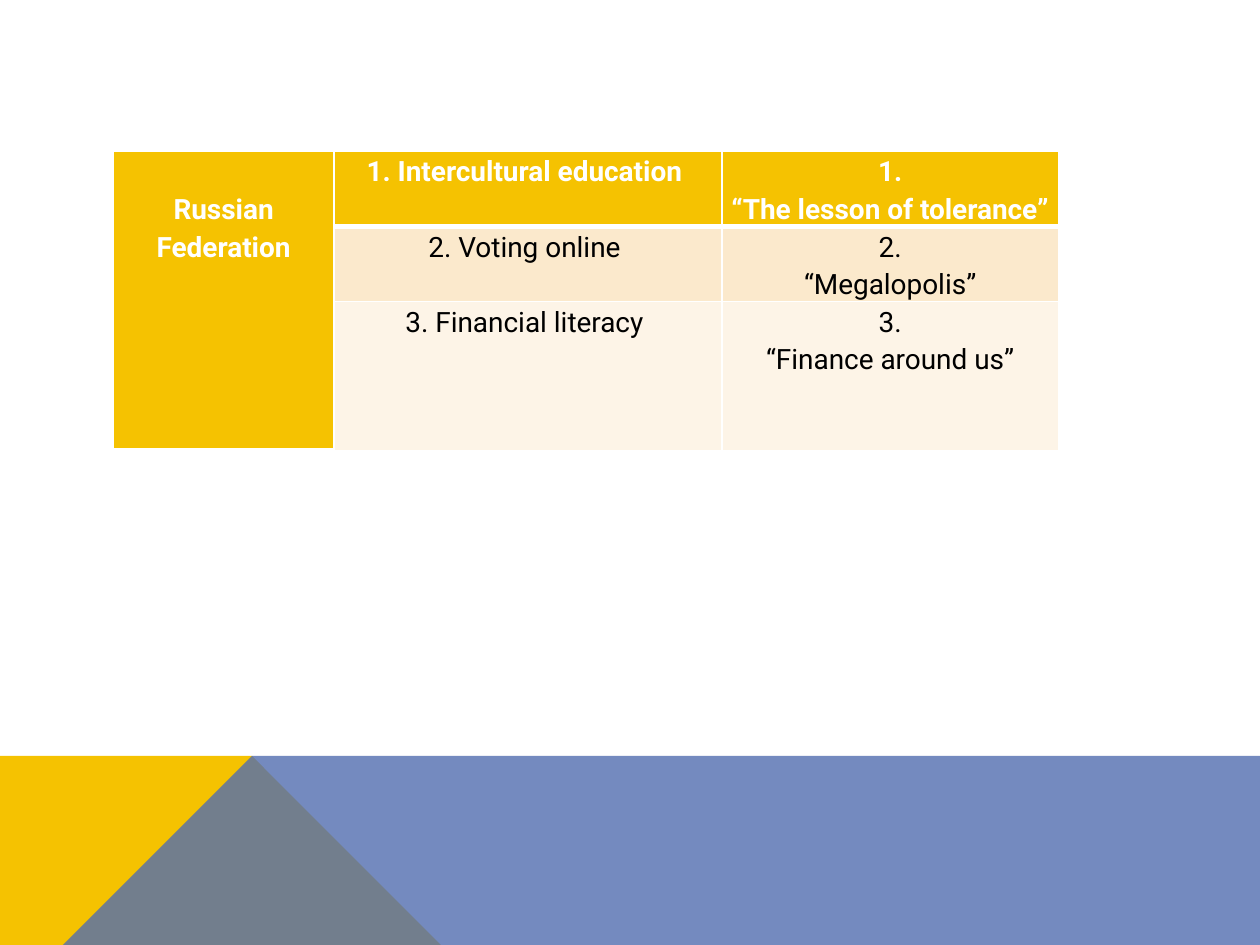
"""Build a slide with a table of Russian Federation lessons above a two-colour footer."""
from lxml import etree
from pptx import Presentation
from pptx.dml.color import RGBColor
from pptx.enum.text import PP_ALIGN
from pptx.oxml.ns import qn
from pptx.util import Inches, Pt

CENTER = PP_ALIGN.CENTER
THEME = {
    "font": "Roboto", "size": Pt(16),
    "gold": "F5C201", "blue": "526DB0", "white": "FFFFFF", "black": "000000",
    "rows": ["F5C201", "FBE9CC", "FDF4E7"],
}


def rule(cell, side, spot, width):
    line = etree.Element(qn("a:" + side), w=str(Pt(width)))
    fill = etree.SubElement(line, qn("a:solidFill"))
    etree.SubElement(fill, qn("a:srgbClr"), val=THEME["white"])
    cell.fill.solid()
    cell._tc.get_or_add_tcPr().insert(spot, line)


def write(cell, lines, fill, head, top=0):
    for spot, side in enumerate(["lnL", "lnR", "lnT", "lnB"]):
        rule(cell, side, spot, 3 if head and side == "lnB" else 1)
    cell.fill.fore_color.rgb = RGBColor.from_string(fill)
    edges = {"margin_left": 0.03, "margin_right": 0.03, "margin_top": top, "margin_bottom": 0}
    for name, value in edges.items():
        setattr(cell, name, Inches(value))
    cell.text = "\n".join(lines)
    for para in cell.text_frame.paragraphs:
        para.alignment, para.line_spacing = CENTER, 1.15
        font = para.runs[0].font
        look = {"name": THEME["font"], "size": THEME["size"], "bold": head}
        for name, value in look.items():
            setattr(font, name, value)
        font.color.rgb = RGBColor.from_string(THEME["white" if head else "black"])


deck = Presentation()
deck.slide_width, deck.slide_height = Inches(10), Inches(7.5)
slide = deck.slides.add_slide(deck.slide_layouts[6])

footer = [
    ("gold", 100, [(0, 7.5), (0, 5.52), (2.23, 5.52), (3.91, 7.5)]),
    ("blue", 80, [(0, 7.5), (2.23, 5.52), (10, 5.53), (10, 7.5)]),
]
for color, alpha, points in footer:
    path = slide.shapes.build_freeform(*points[0], scale=Inches(1))
    path.add_line_segments(points[1:], close=True)
    shape = path.convert_to_shape()
    shape.shadow.inherit = False
    shape.line.fill.background()
    shape.fill.solid()
    shape.fill.fore_color.rgb = RGBColor.from_string(THEME[color])
    if alpha < 100:
        tint = next(shape.element.spPr.iter(qn("a:srgbClr")))
        etree.SubElement(tint, qn("a:alpha"), val=str(alpha * 1000))

widths, heights = [1.75, 3.08, 2.67], [0.6, 0.59, 1.18]
topics = [
    ("1. Intercultural education ", "“The lesson of tolerance”"),
    ("2. Voting online ", "“Megalopolis”"),
    ("3. Financial literacy ", "“Finance around us”"),
]
frame = slide.shapes.add_table(
    3, 3, Inches(0.9), Inches(1.2), Inches(sum(widths)), Inches(sum(heights)))
table = frame.table
for col, width in zip(table.columns, widths):
    col.width = Inches(width)
for row, height in zip(table.rows, heights):
    row.height = Inches(height)

table.cell(0, 0).merge(table.cell(2, 0))
write(table.cell(0, 0), ["Russian Federation"], THEME["gold"], True, 0.3)
for i, (topic, lesson) in enumerate(topics):
    fill = THEME["rows"][i]
    write(table.cell(i, 1), [topic], fill, i == 0)
    write(table.cell(i, 2), [f"{i + 1}.", lesson], fill, i == 0)

deck.save("out.pptx")
